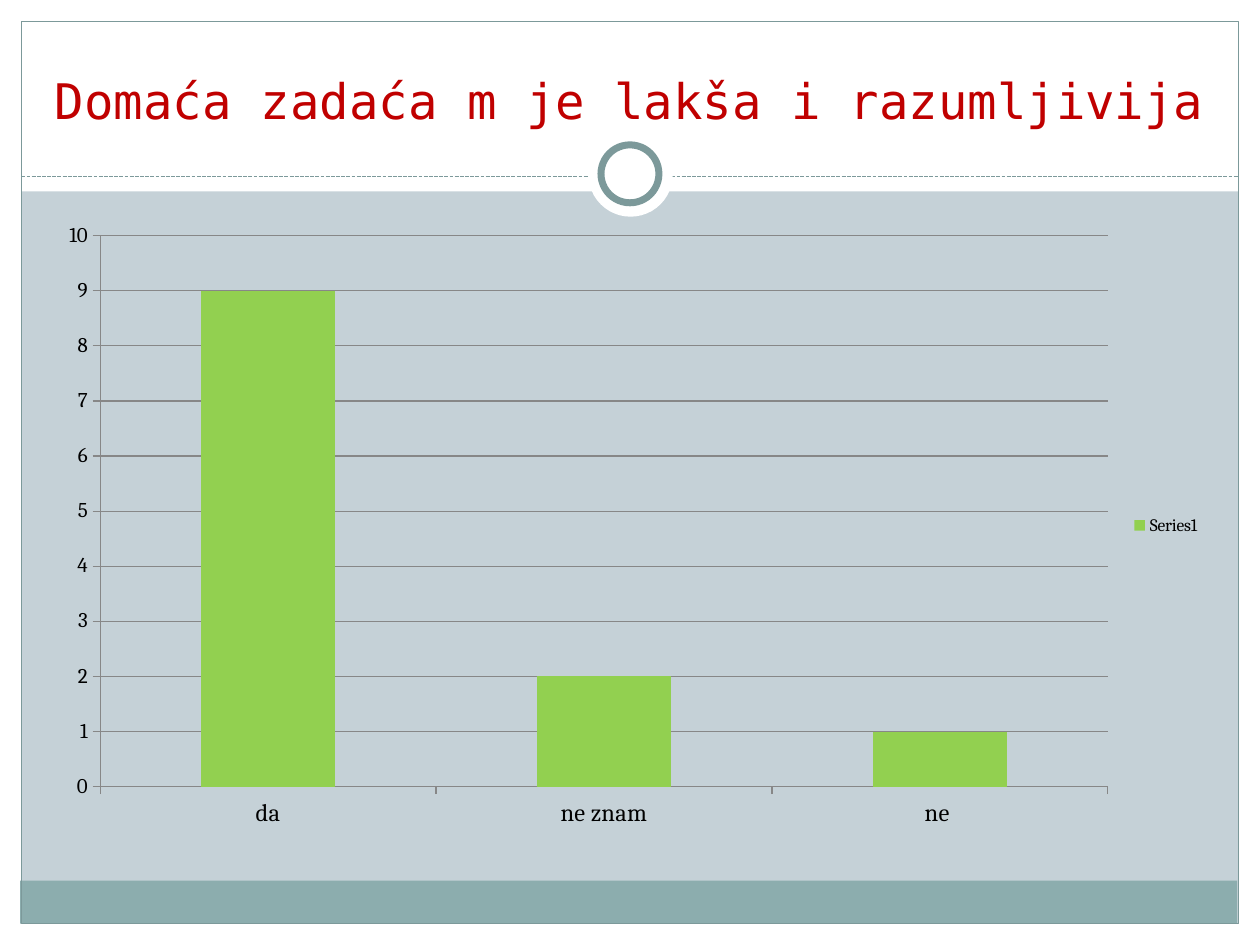
from lxml import etree
from pptx import Presentation
from pptx import util as u
from pptx.chart import data
from pptx.dml import color
from pptx.enum import chart as ch, dml, shapes, text
from pptx.oxml import ns

COLORS = {
    "background": "C5D1D7",
    "white": "FFFFFF",
    "footer": "8CADAE",
    "rule": "7C999A",
    "title": "C00000",
    "bars": "92D050",
    "axis": "878787",
    "label": "000000",
}


def rgb(name):
    return color.RGBColor.from_string(COLORS[name])


def box(at):
    return [u.Inches(length) for length in at]


def add_panel(slide, kind, at, fill=None, line=None, width=0.75):
    panel = slide.shapes.add_shape(kind, *box(at))
    panel.shadow.inherit = False
    if fill:
        panel.fill.solid()
        panel.fill.fore_color.rgb = rgb(fill)
    else:
        panel.fill.background()
    if line:
        panel.line.color.rgb = rgb(line)
        panel.line.width = u.Pt(width)
    else:
        panel.line.fill.background()


def add_divider(slide, left, right, y):
    divider = slide.shapes.add_connector(
        shapes.MSO_CONNECTOR.STRAIGHT, *box((left, y, right, y)))
    divider.line.color.rgb = rgb("rule")
    divider.line.width = u.Pt(0.75)
    divider.line.dash_style = dml.MSO_LINE.SQUARE_DOT
    etree.SubElement(divider._element.spPr, ns.qn("a:effectLst"))


def add_title(slide, at, wording):
    title = slide.shapes.add_textbox(*box(at))
    frame = title.text_frame
    frame.word_wrap = True
    frame.margin_left = frame.margin_right = 0
    frame.vertical_anchor = text.MSO_ANCHOR.BOTTOM
    frame.text = wording
    paragraph = frame.paragraphs[0]
    paragraph.alignment = text.PP_ALIGN.CENTER
    font = paragraph.runs[0].font
    font.name = "DejaVu Sans Mono"
    font.size = u.Pt(28)
    font.color.rgb = rgb("title")


def style_axis(axis, size):
    axis.major_tick_mark = ch.XL_TICK_MARK.OUTSIDE
    axis.minor_tick_mark = ch.XL_TICK_MARK.NONE
    axis.tick_labels.font.size = u.Pt(size)
    axis.format.line.color.rgb = rgb("axis")
    axis.format.line.width = u.Pt(0.75)


def place_plot(chart, **fractions):
    plot_area = chart._chartSpace.chart.plotArea
    for old in plot_area.findall(ns.qn("c:layout")):
        plot_area.remove(old)
    layout = etree.Element(ns.qn("c:layout"))
    manual = etree.SubElement(layout, ns.qn("c:manualLayout"))
    settings = {"layoutTarget": "inner", "xMode": "edge", "yMode": "edge"}
    for tag, value in {**settings, **fractions}.items():
        etree.SubElement(manual, ns.qn(f"c:{tag}")).set("val", str(value))
    plot_area.insert(0, layout)


def add_answers_chart(slide, at, answers):
    chart_data = data.CategoryChartData()
    chart_data.categories = list(answers)
    chart_data.add_series("Series1", list(answers.values()))
    chart = slide.shapes.add_chart(
        ch.XL_CHART_TYPE.COLUMN_CLUSTERED, *box(at), chart_data).chart
    chart.has_title = False
    chart.font.name = "Cambria"
    chart.font.size = u.Pt(10)
    chart.font.color.rgb = rgb("label")
    chart.has_legend = True
    chart.legend.position = ch.XL_LEGEND_POSITION.RIGHT
    chart.legend.include_in_layout = False

    plot = chart.plots[0]
    plot.gap_width = 150
    plot.vary_by_categories = False
    bars = plot.series[0].format.fill
    bars.solid()
    bars.fore_color.rgb = rgb("bars")

    style_axis(chart.category_axis, 14)
    counts = chart.value_axis
    style_axis(counts, 12)
    counts.minimum_scale, counts.maximum_scale, counts.major_unit = 0, 10, 1
    counts.has_major_gridlines = True
    counts.major_gridlines.format.line.color.rgb = rgb("axis")
    counts.major_gridlines.format.line.width = u.Pt(0.75)
    place_plot(chart, x=0.05, y=0.04, w=0.86, h=0.875)


def main():
    deck = Presentation()
    deck.slide_width, deck.slide_height = u.Inches(10), u.Inches(7.5)
    slide = deck.slides.add_slide(deck.slide_layouts[6])
    slide.background.fill.solid()
    slide.background.fill.fore_color.rgb = rgb("background")

    rectangle = shapes.MSO_SHAPE.RECTANGLE
    oval = shapes.MSO_SHAPE.OVAL
    margins = [(0, 7.33, 10, 0.17), (0, 0, 10, 1.52),
               (0, 0, 0.17, 7.5), (9.83, 0, 0.17, 7.5)]
    for margin in margins:
        add_panel(slide, rectangle, margin, "white")
    add_panel(slide, rectangle, (0.16, 6.99, 9.66, 0.34), "footer")
    add_panel(slide, rectangle, (0.17, 0.17, 9.66, 7.16), line="rule")
    add_divider(slide, 0.17, 9.83, 1.4)
    add_panel(slide, oval, (4.67, 1.05, 0.67, 0.67), "white")
    add_panel(slide, oval, (4.77, 1.15, 0.46, 0.46), "white", "rule", 4)

    add_title(slide, (0.33, 0.25, 9.33, 0.83),
              "Domaća zadaća m je lakša i razumljivija")
    add_answers_chart(slide, (0.33, 1.67, 9.3, 5),
                      {"da": 9, "ne znam": 2, "ne ": 1})
    deck.save("out.pptx")


if __name__ == "__main__":
    main()
